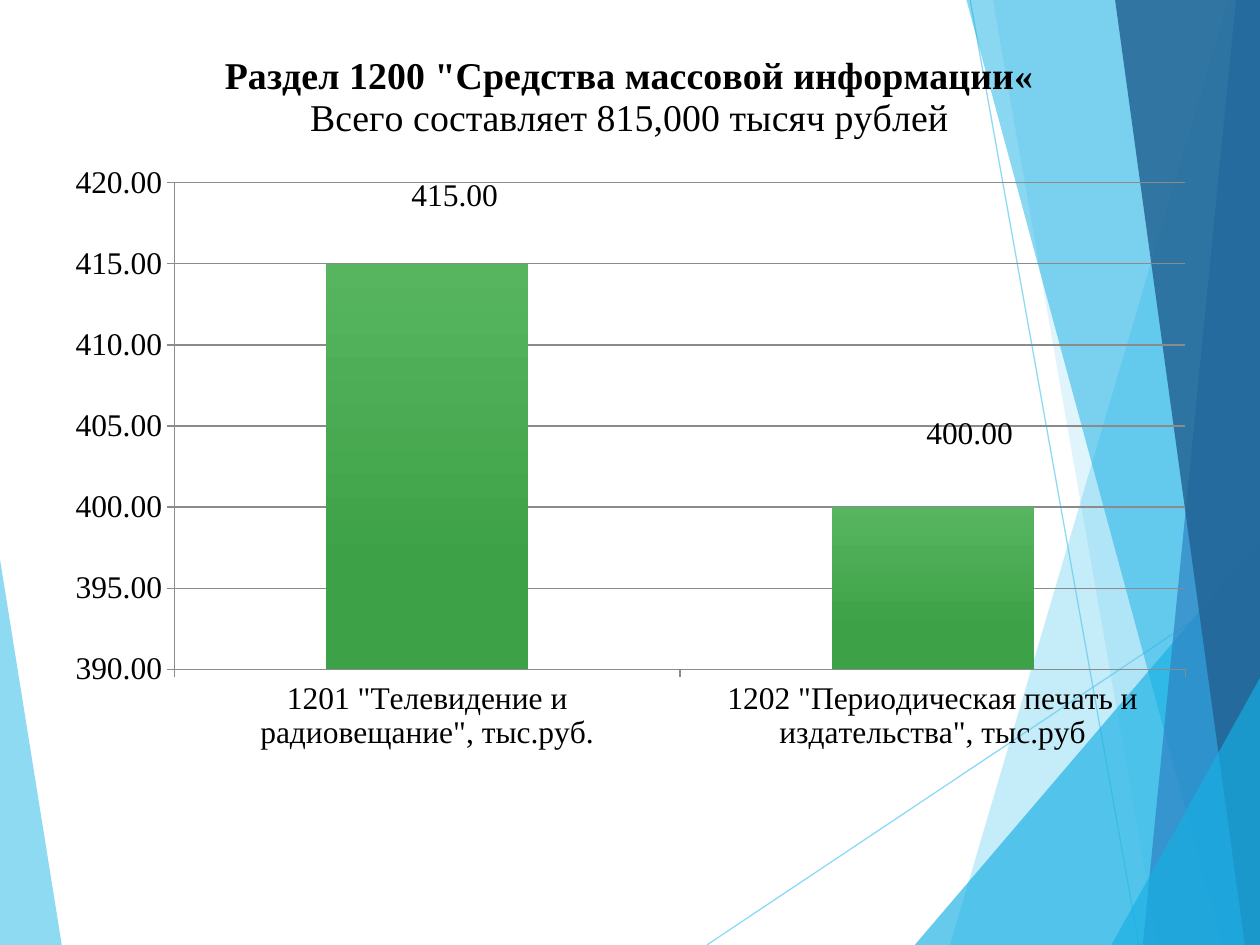
from lxml.etree import SubElement
from pptx import Presentation
from pptx.chart.data import CategoryChartData
from pptx.dml.color import RGBColor
from pptx.enum.chart import XL_CHART_TYPE as ChartType, XL_LABEL_POSITION as LabelPosition
from pptx.enum.chart import XL_TICK_MARK as TickMark
from pptx.enum.shapes import MSO_CONNECTOR as Connector
from pptx.enum.text import PP_ALIGN as Align
from pptx.oxml.ns import qn
from pptx.util import Inches, Pt

W, H = 10, 7.5
FONT = "Times New Roman"
SKY, CYAN, BLUE, NAVY = "5FCBEF", "17B0E4", "2E83C3", "226292"
GRAY, BLACK = "8B8B8B", "000000"
NUMBER_FORMAT = "#,##0.00"


def paint(color, value, owner=None, opacity=100):
    """Set a colour from hex; with an owner element, also its opacity in percent."""
    color.rgb = RGBColor.from_string(value)
    if owner is not None:
        tint = owner.find(".//" + qn("a:srgbClr"))
        SubElement(tint, qn("a:alpha"), val=str(opacity * 1000))


def write(para, text, size=18, bold=False, color=BLACK, align=Align.CENTER):
    para.alignment = align
    span = para.add_run()
    span.text = text
    span.font.name, span.font.size, span.font.bold = FONT, Pt(size), bold
    paint(span.font.color, color)


deck = Presentation()
deck.slide_width, deck.slide_height = Inches(W), Inches(H)
page = deck.slides.add_slide(deck.slide_layouts[6])

# Backdrop: left facet, thin lines, then right facets from back to front
facets = [
    (SKY, 70, [(0, 4.44), (0.49, H), (0, H)]),
    (SKY, 36, [(9.75, 0), (7.54, H), (W, H), (W, 0)]),
    (SKY, 20, [(7.88, 0), (9.19, H), (W, H), (W, 0)]),
    (CYAN, 66, [(7.26, H), (W, 4.29), (W, H)]),
    (CYAN, 50, [(7.67, 0), (9.7, H), (W, H), (W, 0)]),
    (BLUE, 70, [(9.81, 0), (9.07, H), (W, H), (W, 0)]),
    (NAVY, 82, [(8.85, 0), (9.88, H), (W, H), (W, 0)]),
    (CYAN, 66, [(8.82, H), (W, 5.38), (W, H)]),
]
rays = [((5.61, H), (W, 4.57)), ((7.7, 0), (9.04, H))]
for order, (color, opacity, points) in enumerate(facets):
    corners = [(Inches(x), Inches(y)) for x, y in points]
    outline = page.shapes.build_freeform(*corners[0])
    outline.add_line_segments(corners[1:], close=True)
    facet = outline.convert_to_shape()
    facet.shadow.inherit = False
    facet.fill.solid()
    paint(facet.fill.fore_color, color, facet.element.spPr, opacity)
    facet.line.fill.background()
    for start, end in rays if order == 0 else []:
        ray = page.shapes.add_connector(
            Connector.STRAIGHT, *[Inches(length) for length in start + end])
        ray.line.width = Pt(0.75)
        paint(ray.line.color, SKY, ray.element.spPr, 70)
        SubElement(ray.element.spPr, qn("a:effectLst"))

# Column chart
table = CategoryChartData(number_format=NUMBER_FORMAT)
table.categories = [
    '1201 "Телевидение и радиовещание", тыс.руб.',
    '1202 "Периодическая печать и издательства", тыс.руб',
]
table.add_series("Series 1", [415, 400])
chart = page.shapes.add_chart(
    ChartType.COLUMN_CLUSTERED, Inches(0.28), Inches(0.21),
    Inches(9.45), Inches(7.01), table).chart
chart.has_legend = False
chart.font.name, chart.font.size = FONT, Pt(18)
paint(chart.font.color, BLACK)

# Chart title
heading = chart.chart_title.text_frame
write(heading.paragraphs[0], 'Раздел 1200 "Средства массовой информации«', size=21.6, bold=True)
write(heading.add_paragraph(), "Всего составляет 815,000 тысяч рублей", size=21.6)

# Axes and gridlines
scale = chart.value_axis
scale.minimum_scale, scale.maximum_scale, scale.major_unit = 390, 420, 5
scale.has_major_gridlines = True
scale.tick_labels.number_format = NUMBER_FORMAT
scale.tick_labels.number_format_is_linked = False
for axis in (scale, chart.category_axis):
    axis.major_tick_mark = TickMark.OUTSIDE
for part in (scale, chart.category_axis, scale.major_gridlines):
    part.format.line.width = Pt(0.75)
    paint(part.format.line.color, GRAY)

# Green gradient columns
plot = chart.plots[0]
plot.gap_width = 150
plot.vary_by_categories = False
columns = plot.series[0]
fill = columns.format.fill
fill.gradient()
fill.gradient_angle = 270
for stop, color, position in zip(fill.gradient_stops, ("57B560", "3DA147"), (0, 0.75)):
    paint(stop.color, color)
    stop.position = position

# Value labels without leader lines
labels = columns.data_labels
labels.show_value = True
labels.number_format, labels.number_format_is_linked = NUMBER_FORMAT, False
labels.position = LabelPosition.OUTSIDE_END
for index in range(2):
    label = columns.points[index].data_label
    label.font.name, label.font.size = FONT, Pt(18)
    label.position = LabelPosition.OUTSIDE_END
chart_root = chart.element.find(qn("c:chart"))
for leader in chart_root.iter(qn("c:showLeaderLines")):
    leader.set("val", "0")

# Manual layout, in percent of the chart: title, plot area, shifted labels
plot_area = chart_root.find(qn("c:plotArea"))
first_label, second_label = plot_area.iter(qn("c:dLbl"))
edge = {"xMode": "edge", "yMode": "edge"}
layouts = [
    (chart_root.find(qn("c:title")), 1, edge, {"x": 15.6, "y": 2.6}),
    (plot_area, 0, {"layoutTarget": "inner", **edge},
     {"x": 11.7, "y": 17.7, "w": 84.9, "h": 55.1}),
    (first_label, 1, {}, {"x": 2.3, "y": -5.2}),
    (second_label, 1, {}, {"x": 3.1, "y": -5.8}),
]
for parent, index, modes, shares in layouts:
    for old in parent.findall(qn("c:layout")):
        parent.remove(old)
    layout = SubElement(parent, qn("c:layout"))
    manual = SubElement(layout, qn("c:manualLayout"))
    for name, mode in modes.items():
        SubElement(manual, qn("c:" + name), val=mode)
    for name, share in shares.items():
        SubElement(manual, qn("c:" + name), val=str(round(share / 100, 3)))
    parent.insert(index, layout)

deck.save("out.pptx")
